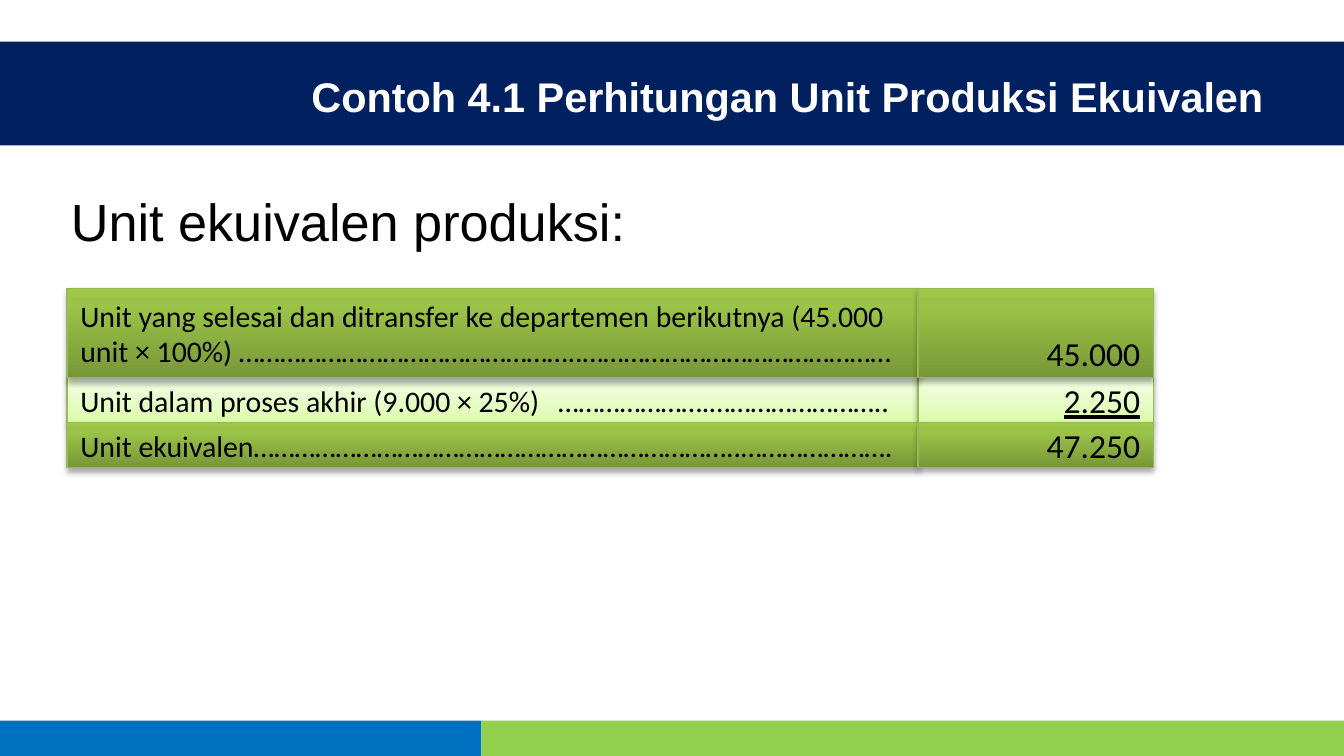
from lxml import etree
from pptx import Presentation
from pptx.dml.color import RGBColor
from pptx.enum import shapes, text
from pptx.oxml import parse_xml
from pptx.util import Cm, Pt

NS = "http://schemas.openxmlformats.org/drawingml/2006/main"
COLORS = {"navy": "002060", "blue": "0070C0", "green": "92D050",
          "black": "000000", "white": "FFFFFF", "border": "98B955"}
# Gradient stops (percent, colour), shadow distance in EMU and shadow opacity
STYLES = {
    "dark": ([(0, "779737"), (80, "9BC348"), (100, "9DC746")], 23000, 35),
    "light": ([(0, "DAFDA7"), (35, "E4FCC2"), (100, "F5FFE7")], 20000, 38),
}


def add_text(sp, content, align, anchor, **fmt):
    """Write one formatted paragraph into sp and return it."""
    tf = sp.text_frame
    tf.word_wrap = True
    tf.vertical_anchor = anchor
    p = tf.paragraphs[0]
    p.alignment = align
    r = p.add_run()
    r.text = content
    r.font.color.rgb = RGBColor.from_string(COLORS[fmt.pop("color")])
    for name, value in fmt.items():
        setattr(r.font, name, value)
    return p


def add_cell(s, x, y, w, h, style):
    """Add a bordered rectangle with a vertical gradient and a soft shadow."""
    stops, dist, alpha = STYLES[style]
    sp = s.shapes.add_shape(shapes.MSO_SHAPE.RECTANGLE, Cm(x), Cm(y), Cm(w), Cm(h))
    sp.line.color.rgb = RGBColor.from_string(COLORS["border"])
    sp.line.width = Pt(0.75)
    gs = "".join(f'<a:gs pos="{pos * 1000}"><a:srgbClr val="{c}"/></a:gs>'
                 for pos, c in stops)
    sp_pr = sp._element.spPr
    sp_pr.find(f"{{{NS}}}prstGeom").addnext(parse_xml(
        f'<a:gradFill xmlns:a="{NS}" rotWithShape="1"><a:gsLst>{gs}</a:gsLst>'
        '<a:lin ang="16200000" scaled="0"/></a:gradFill>'))
    sp_pr.append(parse_xml(
        f'<a:effectLst xmlns:a="{NS}"><a:outerShdw blurRad="40000" dist="{dist}" '
        f'dir="5400000" rotWithShape="0"><a:srgbClr val="{COLORS["black"]}">'
        f'<a:alpha val="{alpha * 1000}"/></a:srgbClr></a:outerShdw></a:effectLst>'))
    return sp


prs = Presentation()
prs.slide_width, prs.slide_height = Cm(25.4), Cm(14.29)
s = prs.slides.add_slide(prs.slide_layouts[6])
LEFT, RIGHT = text.PP_ALIGN.LEFT, text.PP_ALIGN.RIGHT
TOP, MIDDLE, BOTTOM = (text.MSO_ANCHOR.TOP, text.MSO_ANCHOR.MIDDLE,
                       text.MSO_ANCHOR.BOTTOM)

# Footer bands and title band
for x, y, w, h, color in [(0, 13.62, 9.1, 0.67, "blue"),
                          (9.1, 13.62, 16.3, 0.67, "green"),
                          (0, 0.79, 25.4, 1.96, "navy")]:
    sp = s.shapes.add_shape(shapes.MSO_SHAPE.RECTANGLE, Cm(x), Cm(y), Cm(w), Cm(h))
    sp.shadow.inherit = False
    sp.fill.solid()
    sp.fill.fore_color.rgb = RGBColor.from_string(COLORS[color])
    sp.line.fill.background()

heading = s.shapes.add_textbox(Cm(1.09), Cm(3.46), Cm(23.06), Cm(9.4))
add_text(heading, "Unit ekuivalen produksi:", LEFT, TOP,
         size=Pt(28), name="Arial", color="black")
title = s.shapes.add_textbox(Cm(4.22), Cm(0.84), Cm(19.93), Cm(1.96))
add_text(title, "Contoh 4.1 Perhitungan Unit Produksi Ekuivalen", RIGHT, MIDDLE,
         size=Pt(22.2), name="Arial", bold=True, color="white")

# Calculation rows, listed from back to front: top, height, style, label, value
X, LABEL_W, VALUE_W = 1.27, 16.08, 4.45
TOP_Y, TALL, ROW = 5.45, 1.69, 0.85
rows = [
    (TOP_Y + TALL, ROW, "light",
     "Unit dalam proses akhir (9.000 × 25%)\t………………….……………………..", "2.250"),
    (TOP_Y, TALL, "dark",
     "Unit yang selesai dan ditransfer ke departemen berikutnya (45.000 unit × 100%) "
     "…………………………………………..………………………………………", "45.000"),
    (TOP_Y + TALL + ROW, ROW, "dark",
     "Unit ekuivalen……………………………………………………………..………………….", "47.250"),
]
for y, h, style, label, value in rows:
    sp = add_cell(s, X, y, LABEL_W, h, style)
    p = add_text(sp, label, LEFT, MIDDLE, size=Pt(16), name="Calibri", color="black")
    if "\t" in label:
        tabs = etree.SubElement(p._p.get_or_add_pPr(), f"{{{NS}}}tabLst")
        etree.SubElement(tabs, f"{{{NS}}}tab", pos=str(Cm(9.03)), algn="l")

    sp = add_cell(s, X + LABEL_W, y, VALUE_W, h, style)
    sp.text_frame.margin_bottom = Cm(0.08 if h == TALL else 0.13)
    add_text(sp, value, RIGHT, BOTTOM if h == TALL else MIDDLE, size=Pt(18),
             name="Calibri", color="black", underline=style == "light")

prs.save("out.pptx")
